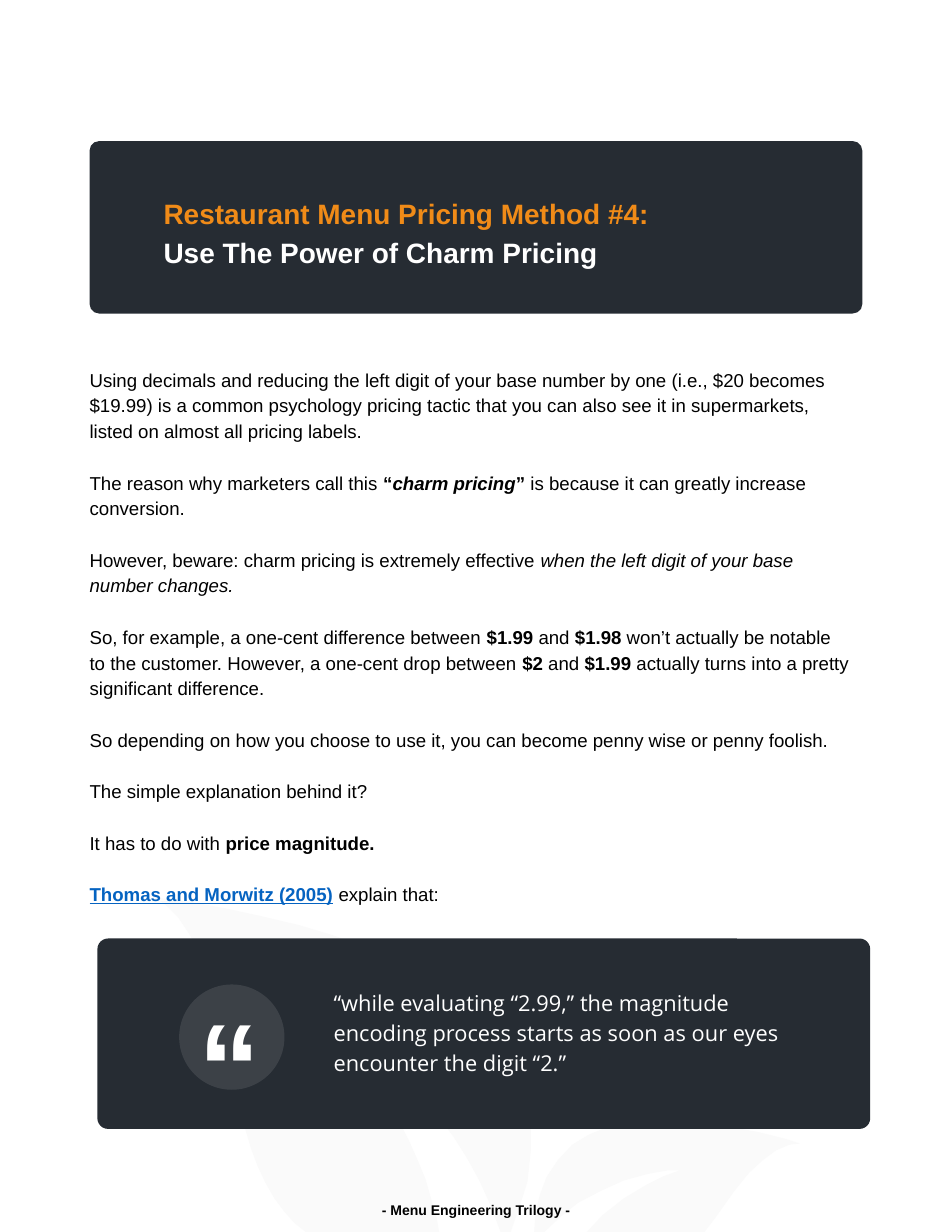
from lxml import etree
from pptx import Presentation
from pptx.dml.color import RGBColor
from pptx.enum import shapes, text
from pptx.oxml import ns
from pptx.util import Inches, Pt

THEME = dict(
    dark="262C33", gold="F08B18", white="FFFFFF", black="000000",
    link="0563C1", leaf="FAFAFA", font="Arial", quote="Open Sans",
    head=18, body=12, cite=14, mark=80, foot=9,
)
T = THEME

deck = Presentation()
deck.slide_width, deck.slide_height = Inches(8.5), Inches(11)
COL, ROW = deck.slide_width / 85, deck.slide_height / 110
slide = deck.slides.add_slide(deck.slide_layouts[1])
parts = slide.shapes


def grid(x, y, w, h):
    """Turn columns and rows into lengths."""
    return [round(n * unit) for n, unit in zip((x, y, w, h), (COL, ROW, COL, ROW))]


def write(box, lines, size, colors=("black",), font="font", bold=False, gap=0,
          lead=1.15, align="LEFT", anchor="TOP", pad=(1, 0.5, 1, 0.5)):
    """Fill a box; * marks bold, _ italic and ~ a link. Colours go by line."""
    frame = box.text_frame
    frame.word_wrap = True
    frame.auto_size = text.MSO_AUTO_SIZE.NONE
    frame.vertical_anchor = text.MSO_ANCHOR[anchor]
    (frame.margin_left, frame.margin_top,
     frame.margin_right, frame.margin_bottom) = grid(*pad)
    for n, line in enumerate(lines):
        para = frame.add_paragraph() if n else frame.paragraphs[0]
        para.alignment = text.PP_ALIGN[align]
        para.line_spacing = lead
        para.space_before, para.space_after = Pt(0), Pt(gap)
        if box.is_placeholder:
            props = para._p.get_or_add_pPr()
            props.set("marL", "0")
            props.set("indent", "0")
            etree.SubElement(props, ns.qn("a:buNone"))
        for b, strong in enumerate(line.split("*")):
            for i, slant in enumerate(strong.split("_")):
                for k, piece in enumerate(slant.split("~")):
                    if not piece:
                        continue
                    run = para.add_run()
                    run.text = piece
                    face = run.font
                    face.name, face.size = T[font], Pt(size)
                    face.bold = bold or b % 2 == 1
                    face.italic = i % 2 == 1
                    face.underline = k % 2 == 1
                    hue = "link" if k % 2 else colors[n % len(colors)]
                    face.color.rgb = RGBColor.from_string(T[hue])


# Leaves in the background, in hundredths of an inch
leaves = [
    [(456, 1100), (447, 1100), (438, 1076), (428, 1054), (417, 1034),
     (405, 1015), (392, 998), (379, 983), (366, 970), (353, 958), (340, 947),
     (323, 935), (308, 925), (289, 915), (302, 927), (314, 940), (330, 960),
     (343, 979), (355, 999), (365, 1018), (373, 1036), (380, 1053), (386, 1074),
     (390, 1088), (392, 1100), (273, 1100), (263, 1092), (254, 1082),
     (245, 1070), (237, 1056), (230, 1041), (224, 1025), (219, 1008),
     (213, 983), (203, 931), (198, 905), (193, 887), (186, 868), (178, 849),
     (169, 834), (159, 819), (149, 809), (141, 803), (136, 801), (151, 803),
     (173, 806), (201, 811), (233, 818), (267, 826), (297, 835), (327, 846),
     (355, 858), (383, 872), (407, 888), (425, 902), (443, 922), (456, 942),
     (465, 962), (471, 985), (474, 1008), (474, 1027), (471, 1055), (465, 1074)],
    [(607, 1045), (596, 1045), (579, 1048), (557, 1054), (537, 1063),
     (516, 1074), (501, 1086), (486, 1100), (477, 1100), (478, 1084),
     (482, 1067), (488, 1051), (498, 1036), (511, 1022), (526, 1013),
     (543, 1006), (562, 1001), (590, 999), (618, 1001), (646, 1005),
     (678, 1011), (702, 1017), (714, 1021), (705, 1022), (693, 1027),
     (681, 1036), (669, 1047), (656, 1063), (639, 1087), (629, 1100),
     (524, 1100), (538, 1085), (557, 1070), (577, 1058), (593, 1050)],
]
for (x, y), *rest in leaves:
    path = parts.build_freeform(x, y, scale=COL / 10)
    path.add_line_segments(rest, close=True)
    leaf = path.convert_to_shape()
    leaf.shadow.inherit = False
    leaf.fill.solid()
    leaf.fill.fore_color.rgb = RGBColor.from_string(T["leaf"])
    leaf.line.fill.background()

# Dark cards and the round badge
kind = shapes.MSO_SHAPE
for form, spot, hue in (
    (kind.ROUNDED_RECTANGLE, (8, 12.6, 69, 15.4), "dark"),
    (kind.ROUNDED_RECTANGLE, (8.7, 83.8, 69, 17), "dark"),
    (kind.OVAL, (16, 87.9, 9.4, 9.4), "white"),
):
    card = parts.add_shape(form, *grid(*spot))
    card.shadow.inherit = False
    card.fill.solid()
    card.fill.fore_color.rgb = RGBColor.from_string(T[hue])
    card.line.fill.background()
    if form == kind.OVAL:
        tint = card._element.spPr.find(".//" + ns.qn("a:srgbClr"))
        etree.SubElement(tint, ns.qn("a:alpha")).set("val", "10000")
    else:
        card.adjustments[0] = 0.056

# Title and body, brought in front of the cards
title, body = parts.title, slide.placeholders[1]
for box, spot in ((title, (13.6, 15.6, 62.2, 15.6)), (body, (8, 32.1, 69, 68.8))):
    box.left, box.top, box.width, box.height = grid(*spot)
    parts._spTree.append(box._element)

write(title, ["Restaurant Menu Pricing Method #4:", "Use The Power of Charm Pricing"],
      T["head"], colors=("gold", "white"), bold=True, pad=(1, 1.5, 1, 0.5))
write(body, [
    "Using decimals and reducing the left digit of your base number by one "
    "(i.e., $20 becomes $19.99) is a common psychology pricing tactic that you "
    "can also see it in supermarkets, listed on almost all pricing labels.",
    "The reason why marketers call this *“_charm pricing_”* is because it can "
    "greatly increase conversion.",
    "However, beware: charm pricing is extremely effective _when the left digit "
    "of your base number changes._",
    "So, for example, a one-cent difference between *$1.99* and *$1.98* won’t "
    "actually be notable to the customer. However, a one-cent drop between *$2* "
    "and* $1.99* actually turns into a pretty significant difference.",
    "So depending on how you choose to use it, you can become penny wise or "
    "penny foolish.",
    "The simple explanation behind it?",
    "It has to do with *price magnitude.*",
    "*~Thomas and Morwitz (2005)~* explain that:",
], T["body"], gap=16.5, pad=(0, 0.5, 1, 0.5))

# Quotation, its mark and the footer
write(parts.add_textbox(*grid(28.8, 87.5, 43.3, 11.9)),
      ["“while evaluating “2.99,” the magnitude encoding process starts as soon "
       "as our eyes encounter the digit “2.”"],
      T["cite"], colors=("white",), font="quote")
write(parts.add_textbox(*grid(16.7, 87.5, 6.2, 14.5)), ["“"], T["mark"],
      colors=("white",), bold=True, lead=1, anchor="MIDDLE")
write(parts.add_textbox(*grid(0, 106, 85, 4)), ["- Menu Engineering Trilogy -"],
      T["foot"], bold=True, lead=1, align="CENTER", anchor="MIDDLE", pad=(1, 1, 1, 1))

deck.save("out.pptx")
